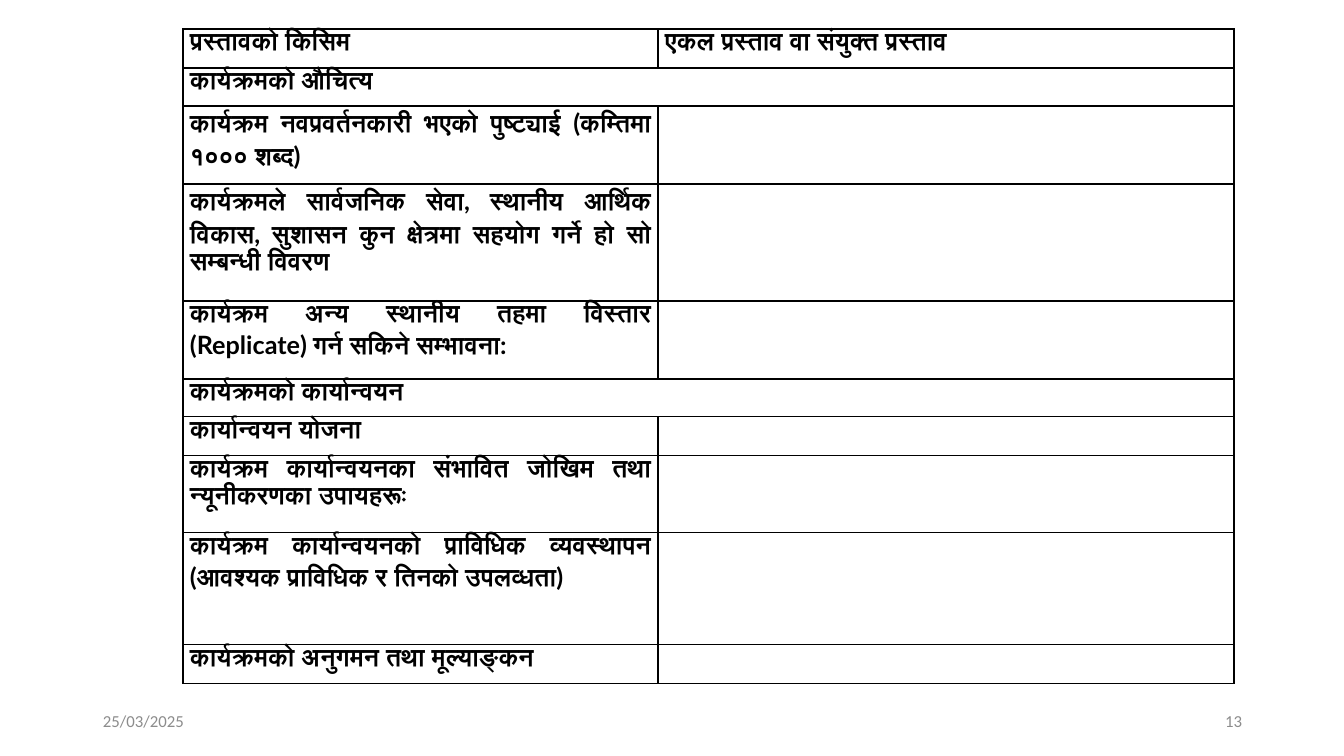
from lxml.etree import SubElement as Sub
from pptx import Presentation
from pptx.dml.color import RGBColor as RGB
from pptx.enum.text import MSO_ANCHOR as Anchor, PP_ALIGN as Align
from pptx.oxml.ns import qn
from pptx.util import Pt

PX = 914400 / 100.8
COLORS = {"ink": "000000", "gray": "8C8C8C", "paper": "FFFFFF"}
COLS = [475, 576]
# Height, label, value; a value of None makes the label span both columns.
ROWS = [
    (39, "प्रस्तावको किसिम", "एकल प्रस्ताव वा संयुक्त प्रस्ताव"),
    (38, "कार्यक्रमको औचित्य", None),
    (78, "कार्यक्रम नवप्रवर्तनकारी भएको पुष्ट्याई (कम्तिमा १००० शब्द)", ""),
    (117, "कार्यक्रमले सार्वजनिक सेवा, स्थानीय आर्थिक विकास, सुशासन कुन "
          "क्षेत्रमा सहयोग गर्ने हो सो सम्बन्धी विवरण", ""),
    (78, "कार्यक्रम अन्य स्थानीय तहमा विस्तार (Replicate) गर्न सकिने सम्भावना:", ""),
    (38, "कार्यक्रमको कार्यान्वयन", None),
    (39, "कार्यान्वयन योजना", ""),
    (77, "कार्यक्रम कार्यान्वयनका संभावित जोखिम तथा न्यूनीकरणका उपायहरूः", ""),
    (112, "कार्यक्रम कार्यान्वयनको प्राविधिक व्यवस्थापन "
          "(आवश्यक प्राविधिक र तिनको उपलव्धता)", ""),
    (39, "कार्यक्रमको अनुगमन तथा मूल्याङ्कन", ""),
]


def px(n):
    return round(n * PX)


def add_run(para, text, face, size, color, bold=False):
    run = para.add_run()
    run.text = text
    font = run.font
    font.name, font.size, font.bold = face, Pt(size), bold
    font.color.rgb = RGB.from_string(COLORS[color])


def style_cell(cell):
    """Set the insets, the thin border on all sides and the fill."""
    cell.margin_left = cell.margin_right = px(7)
    cell.margin_top = cell.margin_bottom = 0
    props = cell._tc.get_or_add_tcPr()
    for side in ("a:lnL", "a:lnR", "a:lnT", "a:lnB"):
        line = Sub(props, qn(side), w=str(Pt(1)))
        fill = Sub(line, qn("a:solidFill"))
        Sub(fill, qn("a:srgbClr"), val=COLORS["ink"])
    cell.fill.background()


def add_form(slide, left, top):
    heights = [row[0] for row in ROWS]
    frame = slide.shapes.add_table(len(ROWS), len(COLS), px(left), px(top),
                                   px(sum(COLS)), px(sum(heights)))
    table = frame.table
    table.first_row = table.horz_banding = False
    for col, width in zip(table.columns, COLS):
        col.width = px(width)
    for r, (height, *texts) in enumerate(ROWS):
        table.rows[r].height = px(height)
        for c, text in enumerate(texts):
            cell = table.cell(r, c)
            style_cell(cell)
            para = cell.text_frame.paragraphs[0]
            para.alignment, para.line_spacing = Align.JUSTIFY, 1.07
            if text:
                add_run(para, text, "Lato", 18, "ink", True)
        if texts[1] is None:
            table.cell(r, 0).merge(table.cell(r, 1))


def add_foot(slide, left, top, width, height):
    """Place the date at the left end and the page number at the right end."""
    part = 302
    for x, text, align in ((left, "25/03/2025", Align.LEFT),
                           (left + width - part, "13", Align.RIGHT)):
        frame = slide.shapes.add_textbox(px(x), px(top), px(part),
                                         px(height)).text_frame
        frame.word_wrap = True
        frame.vertical_anchor = Anchor.MIDDLE
        para = frame.paragraphs[0]
        para.alignment = align
        add_run(para, text, "Calibri", 12, "gray")


def main():
    deck = Presentation()
    deck.slide_width, deck.slide_height = px(1344), px(756)
    slide = deck.slides.add_slide(deck.slide_layouts[6])
    back = slide.background.fill
    back.solid()
    back.fore_color.rgb = RGB.from_string(COLORS["paper"])
    add_foot(slide, 93, 701, 1159, 40)
    add_form(slide, 183, 29)
    deck.save("out.pptx")


if __name__ == "__main__":
    main()
